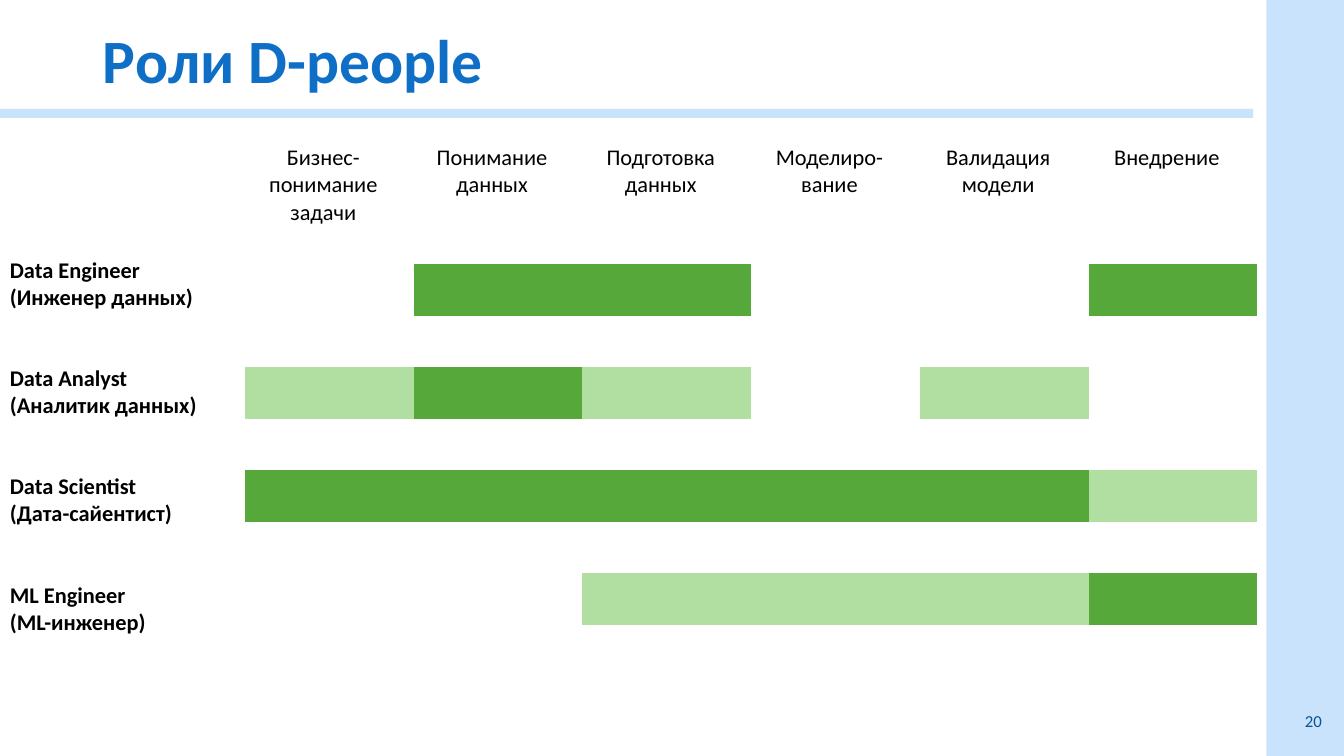
from pptx import Presentation
from pptx.dml.color import RGBColor
from pptx.enum.shapes import MSO_SHAPE as SHAPE
from pptx.enum.text import MSO_ANCHOR as ANCHOR, PP_ALIGN as ALIGN
from pptx.util import Inches, Pt

PALE_BLUE = RGBColor(0xC8, 0xE3, 0xFB)
BLUE = RGBColor(0x0F, 0x6F, 0xC6)
DARK_BLUE = RGBColor(0x0B, 0x53, 0x94)
BLACK = RGBColor(0, 0, 0)
GREEN = RGBColor(0x55, 0xA8, 0x39)
LIGHT_GREEN = RGBColor(0xB0, 0xDF, 0xA1)

FONT = "Calibri"
NO_GRID_STYLE = "{2D5ABB26-0587-4C30-8999-92F81FD0307C}"
LEVELS = {"M": GREEN, "p": LIGHT_GREEN}
STAGES = ["Бизнес-понимание задачи", "Понимание данных", "Подготовка данных",
          "Моделиро-вание", "Валидация модели", "Внедрение"]
ROLES = [
    ("Data Engineer", "(Инженер данных)", ".MM..M"),
    ("Data Analyst", "(Аналитик данных)", "pMp.p."),
    ("Data Scientist", "(Дата-сайентист)", "MMMMMp"),
    ("ML Engineer", "(ML-инженер)", "..pppM"),
]


def add_run(p, text, size, color, bold=False):
    """Add a formatted run to a paragraph."""
    r = p.add_run()
    r.text = text
    r.font.name = FONT
    r.font.size = Pt(size)
    r.font.bold = bold
    r.font.color.rgb = color


def add_band(s, x, y, w, h):
    """Draw a pale blue decorative rectangle."""
    sp = s.shapes.add_shape(SHAPE.RECTANGLE, Inches(x), Inches(y), Inches(w), Inches(h))
    sp.shadow.inherit = False
    sp.fill.solid()
    sp.fill.fore_color.rgb = PALE_BLUE
    sp.line.fill.background()


def add_title(s, text, x, y, w, h):
    """Place and format the title placeholder."""
    sp = s.shapes.title
    sp.left, sp.top, sp.width, sp.height = map(Inches, (x, y, w, h))
    tf = sp.text_frame
    tf.vertical_anchor = ANCHOR.MIDDLE
    p = tf.paragraphs[0]
    p.alignment = ALIGN.LEFT
    p.line_spacing = 0.9
    add_run(p, text, 44, BLUE, True)


def add_page_number(s, number, x, y, w, h):
    """Add the right-aligned page number."""
    tf = s.shapes.add_textbox(Inches(x), Inches(y), Inches(w), Inches(h)).text_frame
    tf.word_wrap = True
    tf.vertical_anchor = ANCHOR.MIDDLE
    p = tf.paragraphs[0]
    p.alignment = ALIGN.RIGHT
    add_run(p, number, 12, DARK_BLUE)


def add_role_names(s, x, y, w, h):
    """List the roles, each a name with its translation below."""
    tf = s.shapes.add_textbox(Inches(x), Inches(y), Inches(w), Inches(h)).text_frame
    tf.word_wrap = False
    for i, (name, translation, _) in enumerate(ROLES):
        p = tf.add_paragraph() if i else tf.paragraphs[0]
        if i:
            p.space_before = Pt(39)
        add_run(p, name, 16, BLACK, True)
        add_run(tf.add_paragraph(), translation, 16, BLACK, True)


def add_plain_table(s, rows, x, y, w, h):
    """Add a table without grid or fills, one column per stage."""
    frame = s.shapes.add_table(rows, len(STAGES), Inches(x), Inches(y), Inches(w), Inches(h))
    table = frame.table
    table.first_row = table.horz_banding = False
    table._tbl.tblPr.find("{*}tableStyleId").text = NO_GRID_STYLE
    for cell in table.iter_cells():
        cell.fill.background()
    return table


def add_stage_header(s, x, y, w, h):
    """Add the row of stage names."""
    table = add_plain_table(s, 1, x, y, w, h)
    for cell, stage in zip(table.iter_cells(), STAGES):
        p = cell.text_frame.paragraphs[0]
        p.alignment = ALIGN.CENTER
        add_run(p, stage, 16, BLACK)


def add_role_matrix(s, x, y, w, h):
    """Colour each role's stages, with an empty row between roles."""
    table = add_plain_table(s, 2 * len(ROLES) - 1, x, y, w, h)
    for i, (_, _, marks) in enumerate(ROLES):
        for j, mark in enumerate(marks):
            if mark in LEVELS:
                fill = table.cell(2 * i, j).fill
                fill.solid()
                fill.fore_color.rgb = LEVELS[mark]


def add_roles_slide(prs):
    """Build the slide that maps roles to project stages."""
    s = prs.slides.add_slide(prs.slide_layouts[5])
    add_band(s, 12.56, 0, 0.77, 7.5)
    add_band(s, 0, 1.08, 12.43, 0.09)
    add_title(s, "Роли D-people", 0.92, 0.13, 11.5, 1)
    add_page_number(s, "20", 10.21, 6.95, 3, 0.4)
    add_role_names(s, 0, 2.49, 2.36, 4.14)
    add_stage_header(s, 2.37, 1.38, 10.04, 0.9)
    add_role_matrix(s, 2.43, 2.62, 10.04, 3.58)


def main():
    """Create and save the presentation."""
    prs = Presentation()
    prs.slide_width, prs.slide_height = Inches(13.33), Inches(7.5)
    add_roles_slide(prs)
    prs.save("out.pptx")


if __name__ == "__main__":
    main()
